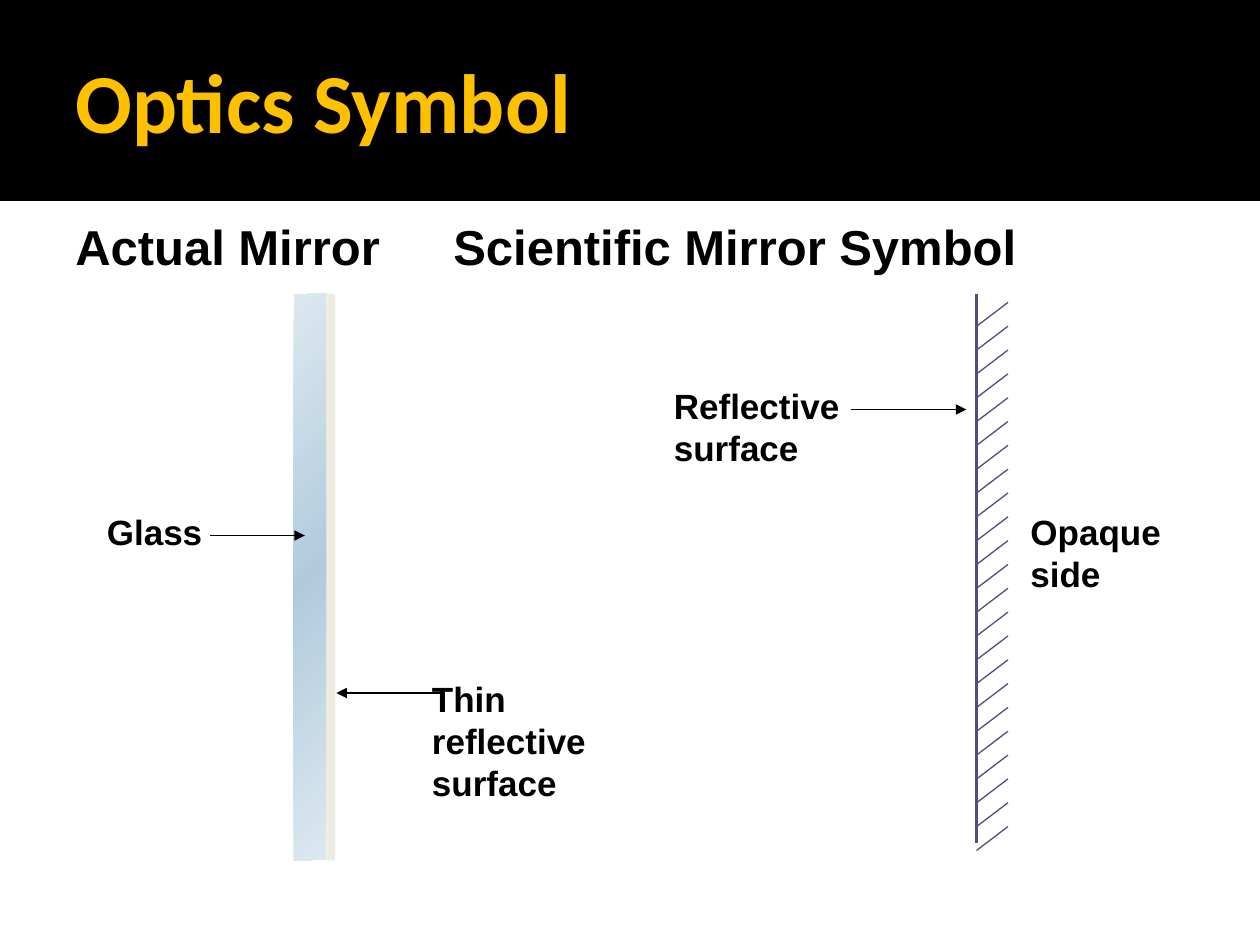
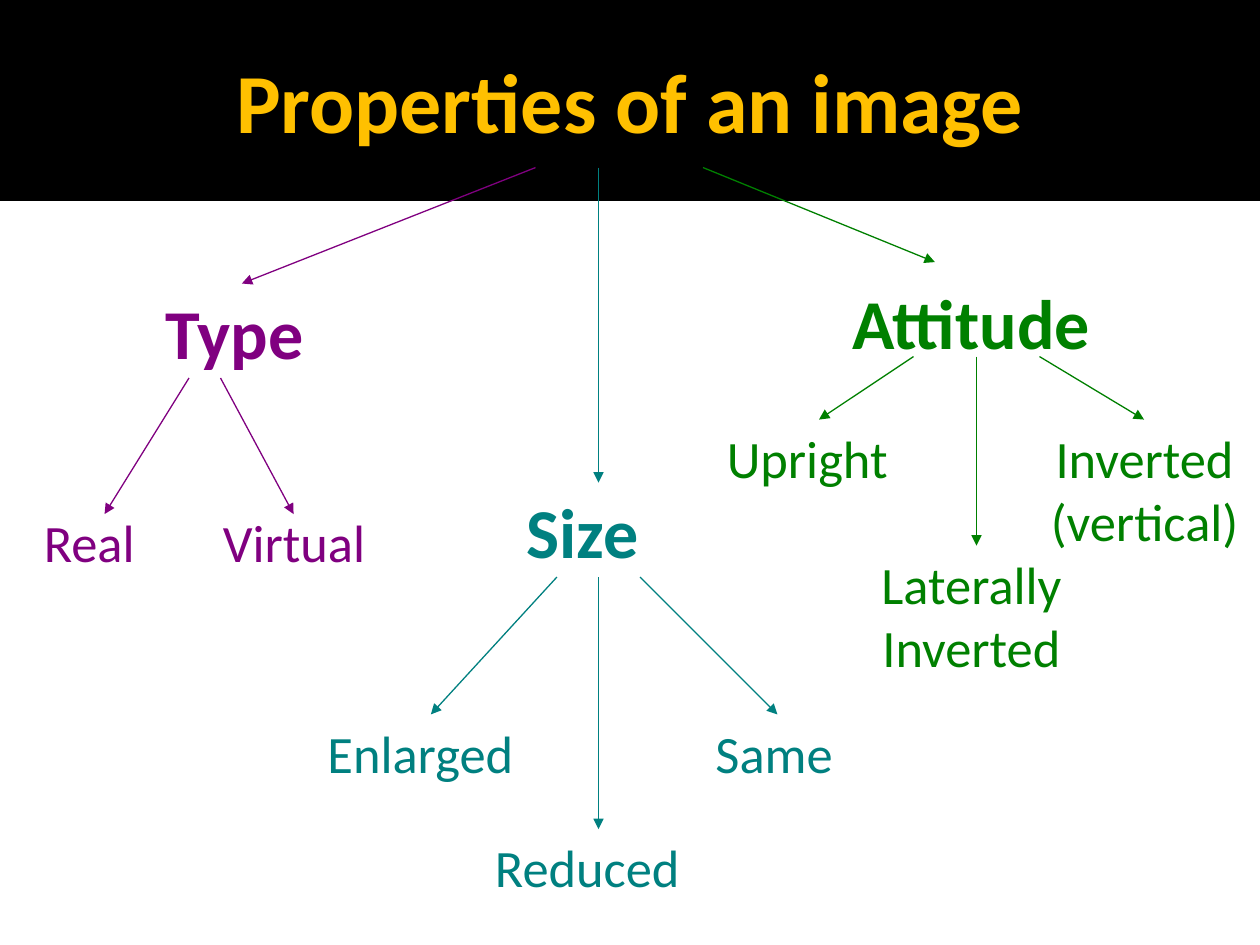
from dataclasses import dataclass

from lxml.etree import SubElement
from pptx import Presentation
from pptx.dml.color import RGBColor
from pptx.enum.shapes import MSO_CONNECTOR as Link, MSO_SHAPE as Shape
from pptx.enum.text import MSO_ANCHOR as Anchor, PP_ALIGN as Align
from pptx.oxml import parse_xml
from pptx.oxml.ns import nsdecls, qn
from pptx.util import Inches, Pt

BLACK = RGBColor(0x00, 0x00, 0x00)
GOLD = RGBColor(0xFF, 0xC0, 0x00)
PURPLE = RGBColor(0x80, 0x00, 0x80)
TEAL = RGBColor(0x00, 0x80, 0x80)
GREEN = RGBColor(0x00, 0x80, 0x00)
INDIGO = RGBColor(0x4E, 0x4F, 0x7E)
CREAM = RGBColor(0xEE, 0xEC, 0xE1)
PALE = RGBColor(0xDC, 0xE8, 0xF0)
MIST = RGBColor(0xB1, 0xCB, 0xDD)

Box = tuple[float, float, float, float]
Point = tuple[float, float]


@dataclass(frozen=True)
class Style:
    font: str
    size: int
    color: RGBColor
    bold: bool = False


@dataclass(frozen=True)
class Label:
    text: str
    box: Box
    align: Align = Align.LEFT
    inset: float = 0.1


@dataclass(frozen=True)
class Arrow:
    start: Point
    end: Point


@dataclass(frozen=True)
class Branch:
    """One property: its heading, its values and the arrows to them."""
    color: RGBColor
    head: Label
    leaves: list[Label]
    arrows: list[Arrow]


TITLE = Style("Calibri", 48, GOLD, True)
HEADING = Style("Arial", 28, BLACK, True)
NOTE = Style("Arial", 20, BLACK, True)

NOTES = [
    Label("Glass", (0.75, 4, 1, 0.77)),
    Label("Thin reflective surface", (3.33, 5.33, 1.5, 1.43)),
    Label("Reflective surface", (5.25, 3, 1.67, 1.1)),
    Label("Opaque side", (8.08, 4, 1.67, 1.1)),
]
POINTERS = [
    Arrow((1.67, 4.25), (2.42, 4.25)),
    Arrow((3.5, 5.5), (2.67, 5.5)),
    Arrow((6.75, 3.25), (7.67, 3.25)),
]
BRANCHES = [
    Branch(
        PURPLE,
        Label("Type", (1.08, 2.25, 1.72, 0.83), inset=0.23),
        [Label("Real", (0.25, 4, 1.5, 0.83)),
         Label("Virtual", (1.67, 4, 1.5, 0.75))],
        [Arrow((4.25, 1.33), (1.92, 2.25)),
         Arrow((1.5, 3), (0.83, 4.08)),
         Arrow((1.75, 3), (2.33, 4.08))],
    ),
    Branch(
        TEAL,
        Label("Size", (4.08, 3.83, 2, 0.83)),
        [Label("Enlarged", (2.5, 5.67, 1.92, 0.83)),
         Label("Reduced", (3.83, 6.58, 1.92, 0.83)),
         Label("Same", (5.58, 5.67, 1.42, 0.83))],
        [Arrow((4.75, 1.33), (4.75, 3.83)),
         Arrow((4.42, 4.58), (3.42, 5.67)),
         Arrow((4.75, 4.58), (4.75, 6.58)),
         Arrow((5.08, 4.58), (6.17, 5.67))],
    ),
    Branch(
        GREEN,
        Label("Attitude", (6.67, 2.17, 2.5, 0.83)),
        [Label("Upright", (5.67, 3.33, 1.67, 0.67)),
         Label("Laterally Inverted", (6.75, 4.33, 1.92, 1.17), Align.CENTER),
         Label("Inverted (vertical)", (8.17, 3.33, 1.83, 1.08), Align.CENTER)],
        [Arrow((5.58, 1.33), (7.42, 2.08)),
         Arrow((7.25, 2.83), (6.5, 3.33)),
         Arrow((7.75, 2.83), (7.75, 4.33)),
         Arrow((8.25, 2.83), (9.08, 3.33))],
    ),
]


def add_text(shapes, label: Label, style: Style, anchor=Anchor.TOP) -> None:
    frame = shapes.add_textbox(*map(Inches, label.box)).text_frame
    frame.word_wrap = True
    frame.vertical_anchor = anchor
    frame.margin_left = Inches(label.inset)
    para = frame.paragraphs[0]
    para.alignment = label.align
    run = para.add_run()
    run.text = label.text
    font = run.font
    font.name, font.size, font.bold = style.font, Pt(style.size), style.bold
    font.color.rgb = style.color


def add_rect(shapes, box: Box, color: RGBColor):
    rect = shapes.add_shape(Shape.RECTANGLE, *map(Inches, box))
    rect.shadow.inherit = False
    rect.fill.solid()
    rect.fill.fore_color.rgb = color
    rect.line.fill.background()
    return rect


def add_line(shapes, start: Point, end: Point, color: RGBColor,
             width: float = 0.75, arrow: bool = False) -> None:
    line = shapes.add_connector(Link.STRAIGHT, *map(Inches, start + end))
    line.line.color.rgb = color
    line.line.width = Pt(width)
    if arrow:
        SubElement(line.line._get_or_add_ln(), qn("a:tailEnd"), type="triangle")
    SubElement(line._element.spPr, qn("a:effectLst"))


def add_arrows(shapes, arrows: list[Arrow], color: RGBColor) -> None:
    for arrow in arrows:
        add_line(shapes, arrow.start, arrow.end, color, arrow=True)


def shade_glass(rect) -> None:
    """Give the pane a diagonal gradient that is darkest in the middle."""
    stops = "".join(
        f'<a:gs pos="{pos}"><a:srgbClr val="{color}"/></a:gs>'
        for pos, color in ((0, PALE), (50000, MIST), (100000, PALE)))
    grad = parse_xml(
        f'<a:gradFill {nsdecls("a")} rotWithShape="1"><a:gsLst>{stops}</a:gsLst>'
        '<a:lin ang="2700000" scaled="0"/></a:gradFill>')
    props = rect._element.spPr
    props.replace(props.find(qn("a:solidFill")), grad)


def add_slide(deck, title: str, align=Align.LEFT):
    """Add a blank slide with the black band and its gold title."""
    shapes = deck.slides.add_slide(deck.slide_layouts[6]).shapes
    band = add_rect(shapes, (0, 0, 10, 1.58), BLACK)
    band.line.color.rgb = BLACK
    band.line.width = Pt(2)
    add_text(shapes, Label(title, (0.5, 0.17, 9, 1.25), align), TITLE,
             Anchor.MIDDLE)
    return shapes


def draw_mirror(shapes) -> None:
    group = shapes.add_group_shape().shapes
    shade_glass(add_rect(group, (2.33, 2.33, 0.26, 4.5), PALE))
    add_rect(group, (2.59, 2.33, 0.07, 4.5), CREAM)


def draw_symbol(shapes) -> None:
    group = shapes.add_group_shape().shapes
    left, right, rise = 7.75, 8, 0.19
    first, last, count = 2.59, 6.75, 23
    add_line(group, (left, 2.33), (left, 6.69), INDIGO, 2.25)
    for i in range(count):
        y = first + i * (last - first) / (count - 1)
        add_line(group, (left, y), (right, y - rise), INDIGO)


def build_optics(deck) -> None:
    shapes = add_slide(deck, "Optics Symbol")
    heads = "\tActual Mirror\t\tScientific Mirror Symbol"
    add_text(shapes, Label(heads, (0, 1.67, 10, 1.03)), HEADING)
    draw_mirror(shapes)
    draw_symbol(shapes)
    for note in NOTES:
        add_text(shapes, note, NOTE)
    add_arrows(shapes, POINTERS, BLACK)


def build_image(deck) -> None:
    shapes = add_slide(deck, "Properties of an image", Align.CENTER)
    for branch in BRANCHES:
        add_text(shapes, branch.head, Style("Calibri", 40, branch.color, True))
        for leaf in branch.leaves:
            add_text(shapes, leaf, Style("Calibri", 30, branch.color))
        add_arrows(shapes, branch.arrows, branch.color)


def main() -> None:
    deck = Presentation()
    deck.slide_width, deck.slide_height = Inches(10), Inches(7.5)
    build_optics(deck)
    build_image(deck)
    deck.save("out.pptx")


if __name__ == "__main__":
    main()
